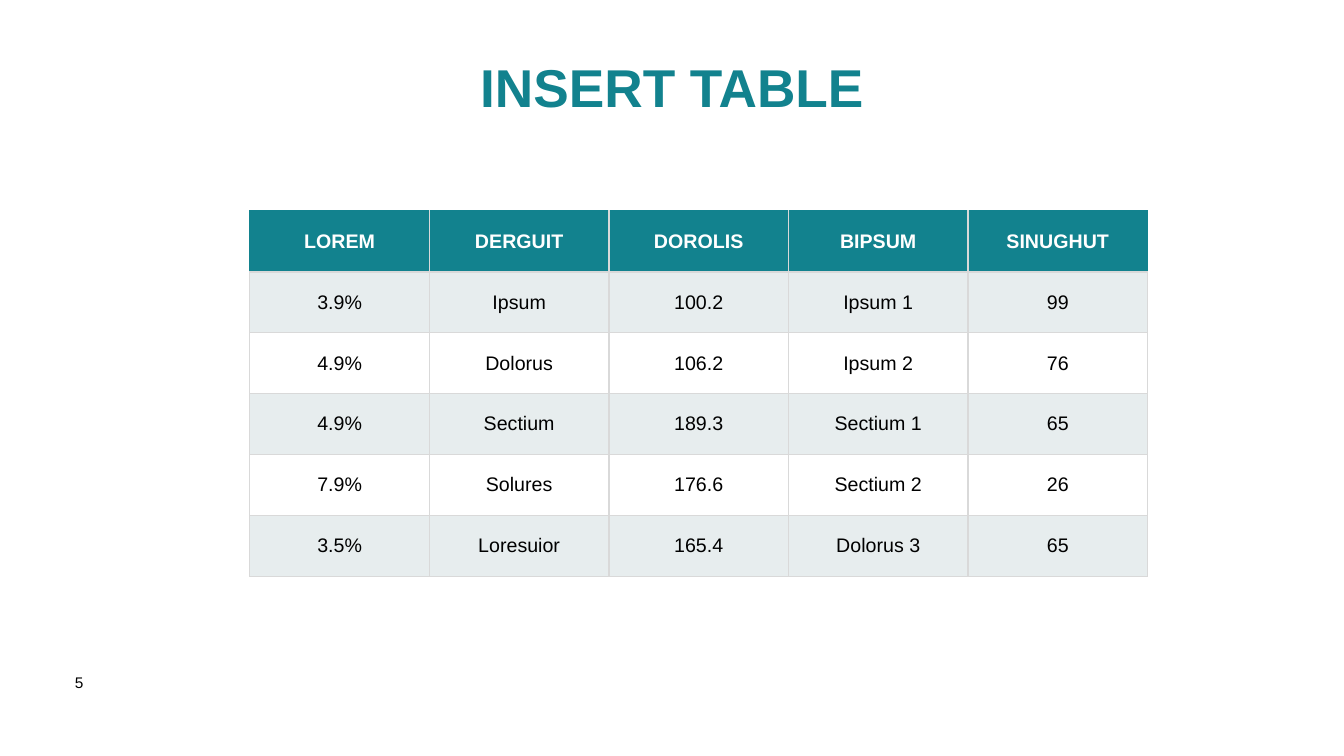
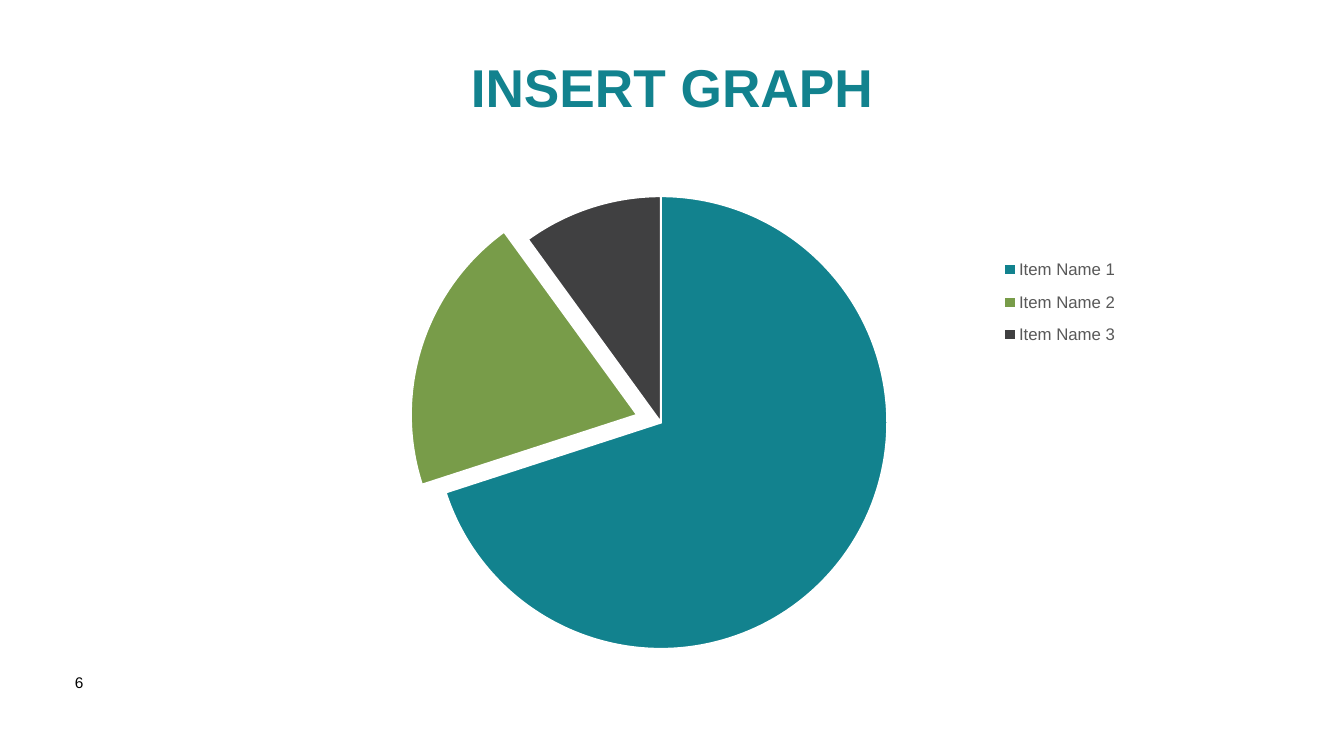
from pptx import Presentation
from pptx.chart.data import CategoryChartData
from pptx.dml.color import RGBColor
from pptx.enum.chart import XL_CHART_TYPE, XL_LEGEND_POSITION
from pptx.enum.text import MSO_ANCHOR, PP_ALIGN
from pptx.oxml import parse_xml
from pptx.oxml.ns import nsdecls
from pptx.util import Emu, Pt

FONT = "Arial"
COLORS = {
    "teal": "12828E",
    "green": "789C49",
    "charcoal": "404041",
    "pale": "E7EDEE",
    "grid": "D9D9D9",
    "legend": "595959",
    "white": "FFFFFF",
    "black": "000000",
}

TABLE_TITLE = "INSERT TABLE"
TABLE_NUMBER = "5"
TABLE_ROWS = [
    ("LOREM", "DERGUIT", "DOROLIS", "BIPSUM", "SINUGHUT"),
    ("3.9%", "Ipsum", "100.2", "Ipsum 1", "99"),
    ("4.9%", "Dolorus", "106.2", "Ipsum 2", "76"),
    ("4.9%", "Sectium", "189.3", "Sectium 1", "65"),
    ("7.9%", "Solures", "176.6", "Sectium 2", "26"),
    ("3.5%", "Loresuior", "165.4", "Dolorus 3", "65"),
]

CHART_TITLE = "INSERT GRAPH"
CHART_NUMBER = "6"
SERIES_NAME = "Series 1"
SLICES = [
    ("Item Name 1", 70, "teal", 0),
    ("Item Name 2", 20, "green", 11),
    ("Item Name 3", 10, "charcoal", 0),
]

SLIDE_SIZE = (1280, 720)
TITLE_BOX = (238, 50, 804, 64)
NUMBER_BOX = (62, 636, 56, 52)
TABLE_ORIGIN = (238, 201)
CELL_SIZE = (171, 58)
CHART_BOX = (62, 176, 1135, 487)
PLOT_LAYOUT = (0.31, 0.02, 0.38, 0.89)
LEGEND_LAYOUT = (0.78, 0.12, 0.11, 0.22)


def px(length):
    return Emu(length * 9525)


def rgb(name):
    return RGBColor.from_string(COLORS[name])


def style_font(font, size, color, bold=False):
    font.name = FONT
    font.size = Pt(size)
    font.bold = bold
    font.color.rgb = rgb(color)


def write(frame, text, size, color, bold=False, align=PP_ALIGN.LEFT):
    para = frame.paragraphs[0]
    para.alignment = align
    span = para.add_run()
    span.text = text
    style_font(span.font, size, color, bold)


def add_text(page, place, text, size, color, bold=False,
             align=PP_ALIGN.LEFT, anchor=MSO_ANCHOR.TOP):
    box = page.shapes.add_textbox(*map(px, place))
    frame = box.text_frame
    frame.word_wrap = True
    frame.vertical_anchor = anchor
    write(frame, text, size, color, bold, align)


def add_page(deck, title, number):
    page = deck.slides.add_slide(deck.slide_layouts[6])
    page.background.fill.solid()
    page.background.fill.fore_color.rgb = rgb("white")
    add_text(page, NUMBER_BOX, number, 11, "black")
    add_text(page, TITLE_BOX, title, 38, "teal", True,
             PP_ALIGN.CENTER, MSO_ANCHOR.MIDDLE)
    return page


def set_borders(cell, sides):
    properties = cell._tc.get_or_add_tcPr()
    for index, (side, color) in enumerate(sides.items()):
        properties.insert(index, parse_xml(
            f'<a:ln{side} {nsdecls("a")} w="12700"><a:solidFill>'
            f'<a:srgbClr val="{COLORS[color]}"/></a:solidFill></a:ln{side}>'
        ))


def add_data_table(page):
    row_count, column_count = len(TABLE_ROWS), len(TABLE_ROWS[0])
    width, height = CELL_SIZE
    table = page.shapes.add_table(
        row_count, column_count, *map(px, TABLE_ORIGIN),
        px(width * column_count), px(height * row_count)
    ).table
    for column in table.columns:
        column.width = px(width)
    for row in table.rows:
        row.height = px(height)
    for row_index, values in enumerate(TABLE_ROWS):
        header = row_index == 0
        fill = "teal" if header else "pale" if row_index % 2 else "white"
        for column_index, value in enumerate(values):
            cell = table.cell(row_index, column_index)
            cell.fill.solid()
            cell.fill.fore_color.rgb = rgb(fill)
            cell.vertical_anchor = MSO_ANCHOR.MIDDLE
            cell.margin_left = cell.margin_right = px(8)
            cell.margin_top = cell.margin_bottom = px(4)
            write(cell.text_frame, value, 14, "white" if header else "black",
                  header, PP_ALIGN.CENTER)
            first, last = column_index == 0, column_index == column_count - 1
            set_borders(cell, {
                "L": "teal" if header and first else "grid",
                "R": "teal" if header and last else "grid",
                "T": "teal" if header else "grid",
                "B": "grid",
            })


def layout_xml(place, target=""):
    x, y, width, height = place
    return parse_xml(
        f'<c:layout {nsdecls("c")}><c:manualLayout>{target}'
        '<c:xMode val="edge"/><c:yMode val="edge"/>'
        f'<c:x val="{x}"/><c:y val="{y}"/>'
        f'<c:w val="{width}"/><c:h val="{height}"/>'
        '</c:manualLayout></c:layout>'
    )


def add_pie(page):
    data = CategoryChartData()
    data.categories = [name for name, *_ in SLICES]
    data.add_series(SERIES_NAME, [value for _, value, *_ in SLICES])
    chart = page.shapes.add_chart(
        XL_CHART_TYPE.PIE, *map(px, CHART_BOX), data
    ).chart
    chart.has_title = False
    style_font(chart.font, 10, "black")
    plot = chart.plots[0]
    plot.vary_by_categories = True
    for index, (_, _, color, explosion) in enumerate(SLICES):
        point = plot.series[0].points[index]
        point.format.fill.solid()
        point.format.fill.fore_color.rgb = rgb(color)
        point.format.line.color.rgb = rgb("white")
        point.format.line.width = Pt(1.5)
        if explosion:
            properties = point.format.fill._xPr
            properties.addprevious(parse_xml(
                f'<c:explosion {nsdecls("c")} val="{explosion}"/>'
            ))
    chart.has_legend = True
    legend = chart.legend
    legend.position = XL_LEGEND_POSITION.BOTTOM
    legend.include_in_layout = False
    style_font(legend.font, 12, "legend")

    plot_area = chart._chartSpace.chart.plotArea
    for element in (plot_area, legend._element):
        for old in element.findall("{*}layout"):
            element.remove(old)
    plot_area.insert(0, layout_xml(
        PLOT_LAYOUT, '<c:layoutTarget val="inner"/>'))
    legend._element.find("{*}legendPos").addnext(layout_xml(LEGEND_LAYOUT))


def main():
    deck = Presentation()
    deck.slide_width, deck.slide_height = map(px, SLIDE_SIZE)
    add_data_table(add_page(deck, TABLE_TITLE, TABLE_NUMBER))
    add_pie(add_page(deck, CHART_TITLE, CHART_NUMBER))
    deck.save("out.pptx")


if __name__ == "__main__":
    main()
